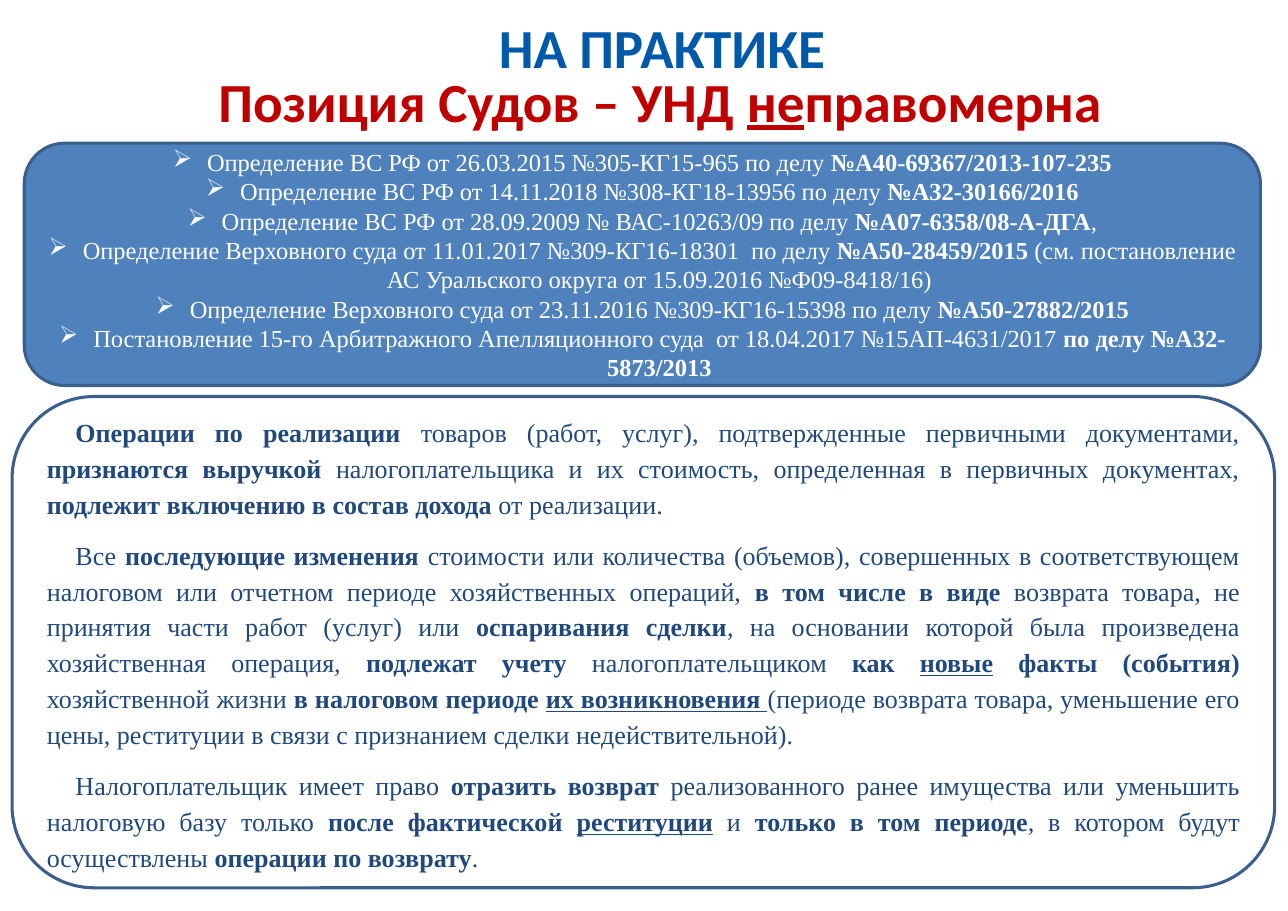
from lxml import etree
from pptx import Presentation
from pptx.dml.color import RGBColor
from pptx.enum.shapes import MSO_SHAPE as Shape
from pptx.enum.text import MSO_ANCHOR as Anchor, MSO_AUTO_SIZE as AutoSize, PP_ALIGN as Align
from pptx.oxml import parse_xml
from pptx.oxml.ns import nsdecls, qn
from pptx.util import Inches, Pt

BLUE, RED, NAVY = "005AA9", "C00000", "1F497D"
PANEL, BORDER, WHITE = "4F81BD", "3A5F8C", "FFFFFF"

# *bold*, _underlined_
RULINGS = [
    "Определение ВС РФ от 26.03.2015 №305-КГ15-965 по делу *№А40-69367/2013-107-235*",
    "Определение ВС РФ от 14.11.2018 №308-КГ18-13956 по делу *№А32-30166/2016*",
    "Определение ВС РФ от 28.09.2009 № ВАС-10263/09 по делу *№А07-6358/08-А-ДГА*,",
    "Определение Верховного суда от 11.01.2017 №309-КГ16-18301  по делу *№А50-28459/2015 *"
    "(см. постановление АС Уральского округа от 15.09.2016 №Ф09-8418/16)",
    "Определение Верховного суда от 23.11.2016 №309-КГ16-15398 по делу *№А50-27882/2015*",
    "Постановление 15-го Арбитражного Апелляционного суда  от 18.04.2017 №15АП-4631/2017 "
    "*по делу №А32-5873/2013*",
]
POSITION = [
    "*Операции по реализации *товаров (работ, услуг), подтвержденные первичными документами, "
    "*признаются выручкой *налогоплательщика и их стоимость, определенная в первичных документах, "
    "*подлежит включению в состав дохода *от реализации.",
    "Все *последующие изменения* стоимости или количества (объемов), совершенных в соответствующем "
    "налоговом или отчетном периоде хозяйственных операций, *в том числе в виде *возврата товара, "
    "не принятия части работ (услуг) или *оспаривания сделки*, на основании которой была произведена "
    "хозяйственная операция, *подлежат учету* налогоплательщиком *как _новые_ факты (события) *"
    "хозяйственной жизни *в налоговом периоде _их возникновения _*(периоде возврата товара, "
    "уменьшение его цены, реституции в связи с признанием сделки недействительной).",
    "Налогоплательщик имеет право *отразить возврат *реализованного ранее имущества или уменьшить "
    "налоговую базу только *после фактической _реституции_ *и *только в том периоде*, в котором "
    "будут осуществлены *операции по возврату*.",
]


def rgb(color):
    return RGBColor.from_string(color)


def add_text_shadow(run):
    shadow = parse_xml(
        f'<a:effectLst {nsdecls("a")}><a:outerShdw blurRad="38100" dist="38100" dir="2700000" algn="tl">'
        '<a:srgbClr val="000000"><a:alpha val="43000"/></a:srgbClr></a:outerShdw></a:effectLst>')
    run.font._element.find(qn("a:solidFill")).addnext(shadow)


def indent(paragraph, left, first, bullet=None):
    properties = paragraph._p.get_or_add_pPr()
    properties.set("marL", str(Inches(left)))
    properties.set("indent", str(Inches(first)))
    if bullet:
        etree.SubElement(properties, qn("a:buChar")).set("char", bullet)


def add_runs(paragraph, text, *, size, font, color, shadow=False):
    """Split marked text into runs: *bold* and, inside it, _underlined_."""
    for bold, chunk in enumerate(text.split("*")):
        for underline, words in enumerate(chunk.split("_")):
            if not words:
                continue
            run = paragraph.add_run()
            run.text = words
            run.font.size, run.font.name = Pt(size), font
            run.font.bold, run.font.underline = bold % 2 == 1, underline % 2 == 1
            run.font.color.rgb = rgb(color)
            if shadow:
                add_text_shadow(run)


def write(shape, texts, *, align=Align.CENTER, margins=(0.1, 0.05), left=0, first=0,
          bullet=None, line_spacing=None, after=None, **run_format):
    frame = shape.text_frame
    frame.word_wrap, frame.auto_size = True, AutoSize.NONE
    frame.vertical_anchor = Anchor.MIDDLE
    frame.margin_left = frame.margin_right = Inches(margins[0])
    frame.margin_top = frame.margin_bottom = Inches(margins[1])
    for number, text in enumerate(texts):
        paragraph = frame.add_paragraph() if number else frame.paragraphs[0]
        indent(paragraph, left, first, bullet)
        paragraph.alignment = align
        if line_spacing:
            paragraph.line_spacing = line_spacing
        if after:
            paragraph.space_after = Pt(after)
        add_runs(paragraph, text, **run_format)


def write_heading(shape, text, color):
    write(shape, [text], margins=(0.11, 0.06), size=36, font="Calibri", color=color, shadow=True)


def add_panel(slide, left, top, width, height, fill):
    panel = slide.shapes.add_shape(Shape.ROUNDED_RECTANGLE, Inches(left), Inches(top),
                                   Inches(width), Inches(height))
    panel.shadow.inherit = False
    panel.fill.solid()
    panel.fill.fore_color.rgb = rgb(fill)
    panel.line.color.rgb = rgb(BORDER)
    panel.line.width = Pt(2)
    return panel


def main():
    deck = Presentation()
    deck.slide_width, deck.slide_height = Inches(11.69), Inches(8.27)
    slide = deck.slides.add_slide(deck.slide_layouts[5])

    title = slide.shapes.title
    title.left, title.top = Inches(1.21), Inches(-0.28)
    title.width, title.height = Inches(9.6), Inches(1.4)
    write_heading(title, "*НА ПРАКТИКЕ*", BLUE)

    rulings = add_panel(slide, 0.22, 1.3, 11.22, 2.2, PANEL)
    write(rulings, RULINGS, left=0.31, first=-0.31, bullet="➢",
          size=16, font="Times New Roman", color=WHITE)

    verdict = slide.shapes.add_textbox(Inches(1.19), Inches(0.21), Inches(9.6), Inches(1.4))
    write_heading(verdict, "*Позиция Судов – УНД _не_правомерна*", RED)

    position = add_panel(slide, 0.11, 3.6, 11.46, 4.46, WHITE)
    write(position, POSITION, align=Align.JUSTIFY, first=0.26, line_spacing=1.15, after=10,
          size=17, font="Times New Roman", color=NAVY)

    deck.save("out.pptx")


if __name__ == "__main__":
    main()
